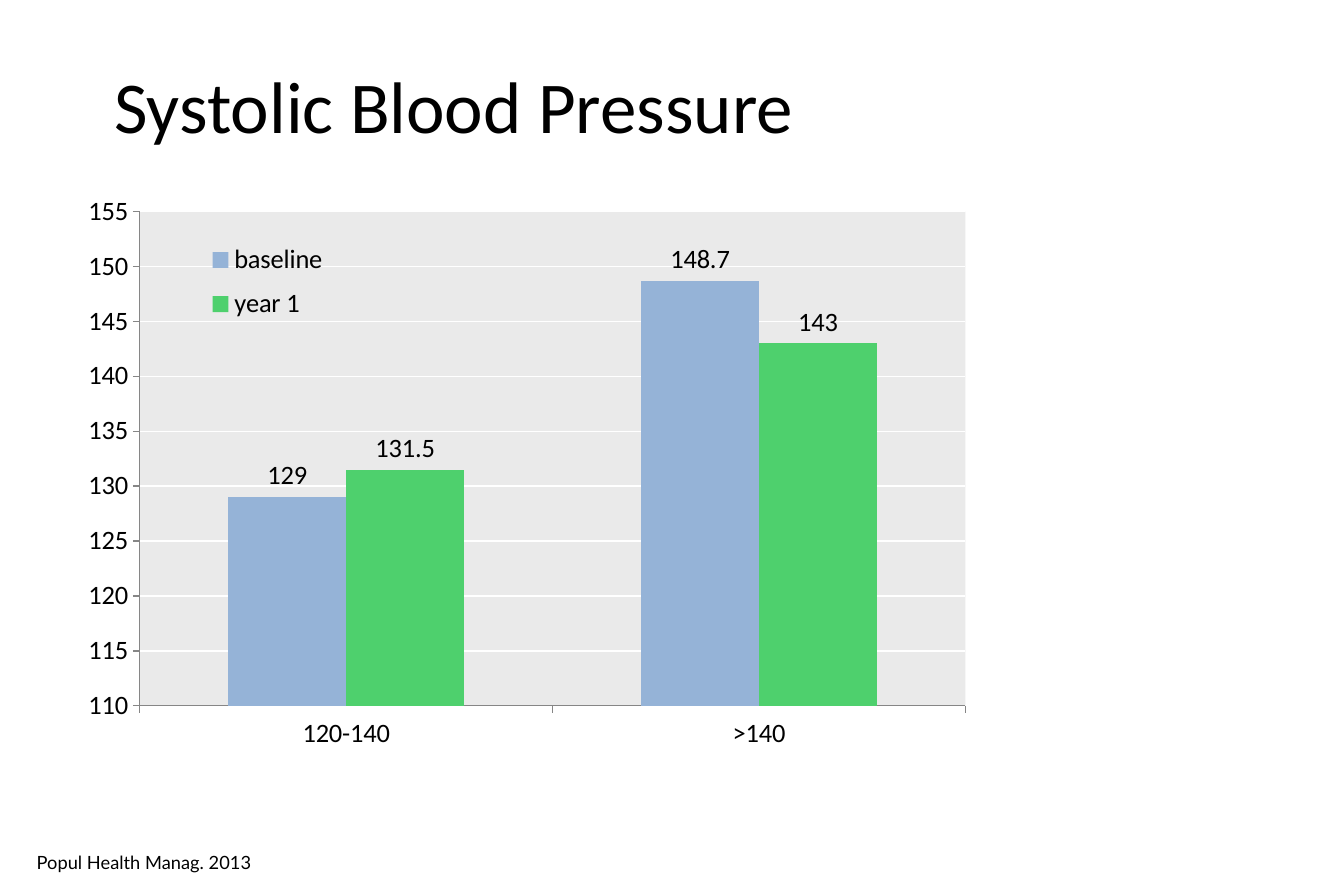
from lxml.etree import SubElement
from pptx import Presentation
from pptx.chart.data import CategoryChartData
from pptx.dml.color import RGBColor
from pptx.enum.chart import XL_CHART_TYPE, XL_LABEL_POSITION, XL_LEGEND_POSITION, XL_TICK_MARK
from pptx.enum.text import MSO_ANCHOR, PP_ALIGN
from pptx.oxml import parse_xml
from pptx.oxml.ns import nsdecls, qn
from pptx.util import Cm, Pt

BLACK = RGBColor(0x00, 0x00, 0x00)
WHITE = RGBColor(0xFF, 0xFF, 0xFF)
AXIS_GRAY = RGBColor(0x86, 0x86, 0x86)
BASELINE_BLUE = RGBColor(0x95, 0xB3, 0xD7)
YEAR_GREEN = RGBColor(0x4E, 0xD0, 0x6D)
PLOT_GRAY = RGBColor(0xEA, 0xEA, 0xEA)

TITLE = "Systolic Blood Pressure"
CITATION = "Popul Health Manag. 2013"
CATEGORIES = ["120-140", ">140"]
SERIES = [
    ("baseline", (129, 148.7), BASELINE_BLUE),
    ("year 1", (131.5, 143), YEAR_GREEN),
]
PLOT_LAYOUT = {"layoutTarget": "inner", "xMode": "edge", "yMode": "edge",
               "x": 0.044, "y": 0.035, "w": 0.75, "h": 0.841}
LEGEND_LAYOUT = {"xMode": "edge", "yMode": "edge",
                 "x": 0.09, "y": 0.07, "w": 0.14, "h": 0.17}


def add_text(slide, text, box, font_name, size):
    shape = slide.shapes.add_textbox(*(Cm(length) for length in box))
    shape.text_frame.word_wrap = True
    paragraph = shape.text_frame.paragraphs[0]
    paragraph.text = text
    paragraph.font.name = font_name
    paragraph.font.size = Pt(size)
    paragraph.font.color.rgb = BLACK
    return shape


def set_layout(parent, index, values):
    for old_layout in parent.findall(qn("c:layout")):
        parent.remove(old_layout)
    layout = parse_xml(f"<c:layout {nsdecls('c')}><c:manualLayout/></c:layout>")
    for name, value in values.items():
        SubElement(layout[0], qn(f"c:{name}"), val=str(value))
    parent.insert(index, layout)


def add_pressure_chart(slide):
    data = CategoryChartData(number_format="General")
    data.categories = CATEGORIES
    for name, values, _ in SERIES:
        data.add_series(name, values)
    chart = slide.shapes.add_chart(
        XL_CHART_TYPE.COLUMN_CLUSTERED,
        Cm(1.88), Cm(4.06), Cm(23.47), Cm(12.5), data).chart
    chart.has_title = False
    chart.font.name = "Calibri"
    chart.font.size = Pt(16)
    chart.font.color.rgb = BLACK

    plot = chart.plots[0]
    plot.vary_by_categories = False
    plot.gap_width = 150
    plot.overlap = 0
    for series, (_, _, color) in zip(plot.series, SERIES):
        series.format.fill.solid()
        series.format.fill.fore_color.rgb = color
        series.data_labels.show_value = True
        series.data_labels.position = XL_LABEL_POSITION.OUTSIDE_END

    for axis in (chart.category_axis, chart.value_axis):
        axis.major_tick_mark = XL_TICK_MARK.OUTSIDE
        axis.minor_tick_mark = XL_TICK_MARK.NONE
        axis.format.line.color.rgb = AXIS_GRAY
        axis.format.line.width = Pt(0.75)
    value_axis = chart.value_axis
    value_axis.minimum_scale = 110
    value_axis.maximum_scale = 155
    value_axis.major_unit = 5
    value_axis.has_major_gridlines = True
    value_axis.major_gridlines.format.line.color.rgb = WHITE
    value_axis.major_gridlines.format.line.width = Pt(0.75)

    chart.has_legend = True
    chart.legend.position = XL_LEGEND_POSITION.RIGHT
    chart.legend.include_in_layout = True
    set_layout(chart.legend._element, 1, LEGEND_LAYOUT)

    plot_area = chart._chartSpace.chart.plotArea
    set_layout(plot_area, 0, PLOT_LAYOUT)
    plot_area.append(parse_xml(
        f'<c:spPr {nsdecls("c", "a")}><a:solidFill><a:srgbClr val="{PLOT_GRAY}"/>'
        "</a:solidFill><a:ln><a:noFill/></a:ln></c:spPr>"))


def main():
    presentation = Presentation()
    presentation.slide_width = Cm(28.575)
    presentation.slide_height = Cm(19.05)
    slide = presentation.slides.add_slide(presentation.slide_layouts[6])

    title = add_text(slide, TITLE, (1.63, 0.38, 16.05, 3.68), "Calibri", 44)
    title.text_frame.vertical_anchor = MSO_ANCHOR.MIDDLE
    title.text_frame.paragraphs[0].alignment = PP_ALIGN.CENTER
    add_pressure_chart(slide)
    add_text(slide, CITATION, (0.53, 17.98, 5.28, 0.84), "Lato", 11)
    presentation.save("out.pptx")


if __name__ == "__main__":
    main()
